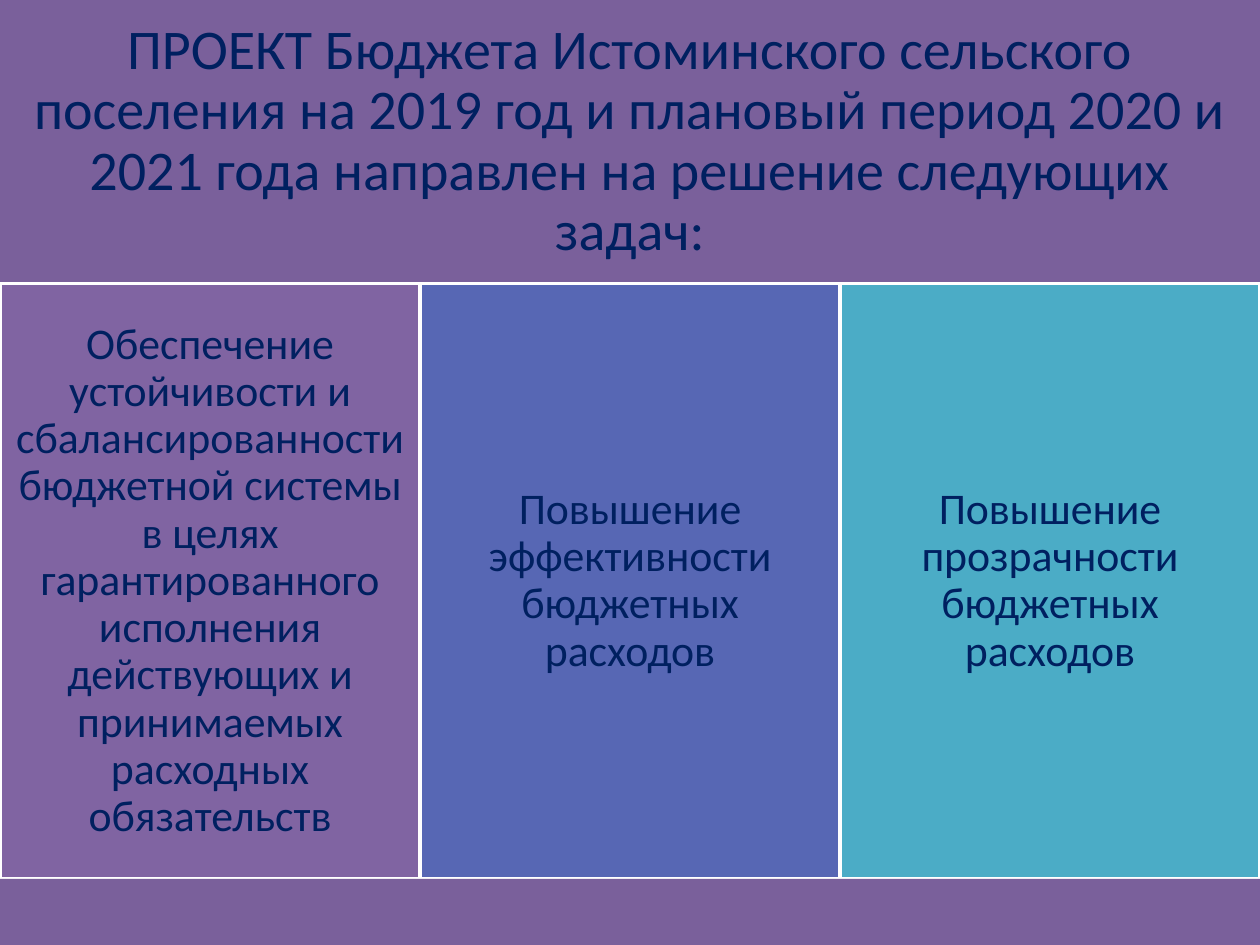
from pptx import Presentation
from pptx import util as u
from pptx.dml.color import RGBColor
from pptx.enum import shapes, text

PAGE_WIDTH, PAGE_HEIGHT = 720, 540
HEADER_HEIGHT, TASK_HEIGHT = 162, 340.2
FONT, TEXT_COLOR, LINE_COLOR, BAND_COLOR = "Calibri", "002060", "FFFFFF", "7A609B"

TITLE = ("ПРОЕКТ Бюджета Истоминского сельского поселения на 2019 год "
         "и плановый период 2020 и 2021 года направлен на решение следующих задач:")
TASKS = [
    ("8064A2", "Обеспечение устойчивости и сбалансированности бюджетной системы "
               "в целях гарантированного исполнения действующих и принимаемых "
               "расходных обязательств"),
    ("5767B4", "Повышение эффективности бюджетных расходов"),
    ("4BACC6", "Повышение прозрачности бюджетных расходов"),
]


def color(value):
    return RGBColor.from_string(value)


def add_block(page, left, top, width, height, fill, outlined=False):
    box = page.shapes.add_shape(shapes.MSO_SHAPE.RECTANGLE, u.Pt(left), u.Pt(top),
                                u.Pt(width), u.Pt(height))
    box.shadow.inherit = False
    box.fill.solid()
    box.fill.fore_color.rgb = color(fill)
    if outlined:
        box.line.color.rgb = color(LINE_COLOR)
        box.line.width = u.Pt(2)
    else:
        box.line.fill.background()
    return box


def write(box, words, size, inset):
    frame = box.text_frame
    frame.word_wrap = True
    frame.vertical_anchor = text.MSO_ANCHOR.MIDDLE
    frame.margin_left = frame.margin_right = u.Pt(inset)
    frame.margin_top = frame.margin_bottom = u.Pt(inset)
    para = frame.paragraphs[0]
    para.text = words
    para.alignment = text.PP_ALIGN.CENTER
    para.line_spacing = 0.9
    para.font.name = FONT
    para.font.size = u.Pt(size)
    para.font.color.rgb = color(TEXT_COLOR)


def main():
    deck = Presentation()
    deck.slide_width, deck.slide_height = u.Pt(PAGE_WIDTH), u.Pt(PAGE_HEIGHT)
    page = deck.slides.add_slide(deck.slide_layouts[6])

    # Header band
    header = add_block(page, 0, 0, PAGE_WIDTH, HEADER_HEIGHT, BAND_COLOR)
    write(header, TITLE, 32, 9.6)

    # Budget tasks in equal columns
    width = PAGE_WIDTH / len(TASKS)
    for index, (fill, words) in enumerate(TASKS):
        task = add_block(page, index * width, HEADER_HEIGHT, width, TASK_HEIGHT,
                         fill, outlined=True)
        write(task, words, 25, 7.5)

    # Footer band
    footer_top = HEADER_HEIGHT + TASK_HEIGHT
    add_block(page, 0, footer_top, PAGE_WIDTH, PAGE_HEIGHT - footer_top, BAND_COLOR)

    deck.save("out.pptx")


if __name__ == "__main__":
    main()
